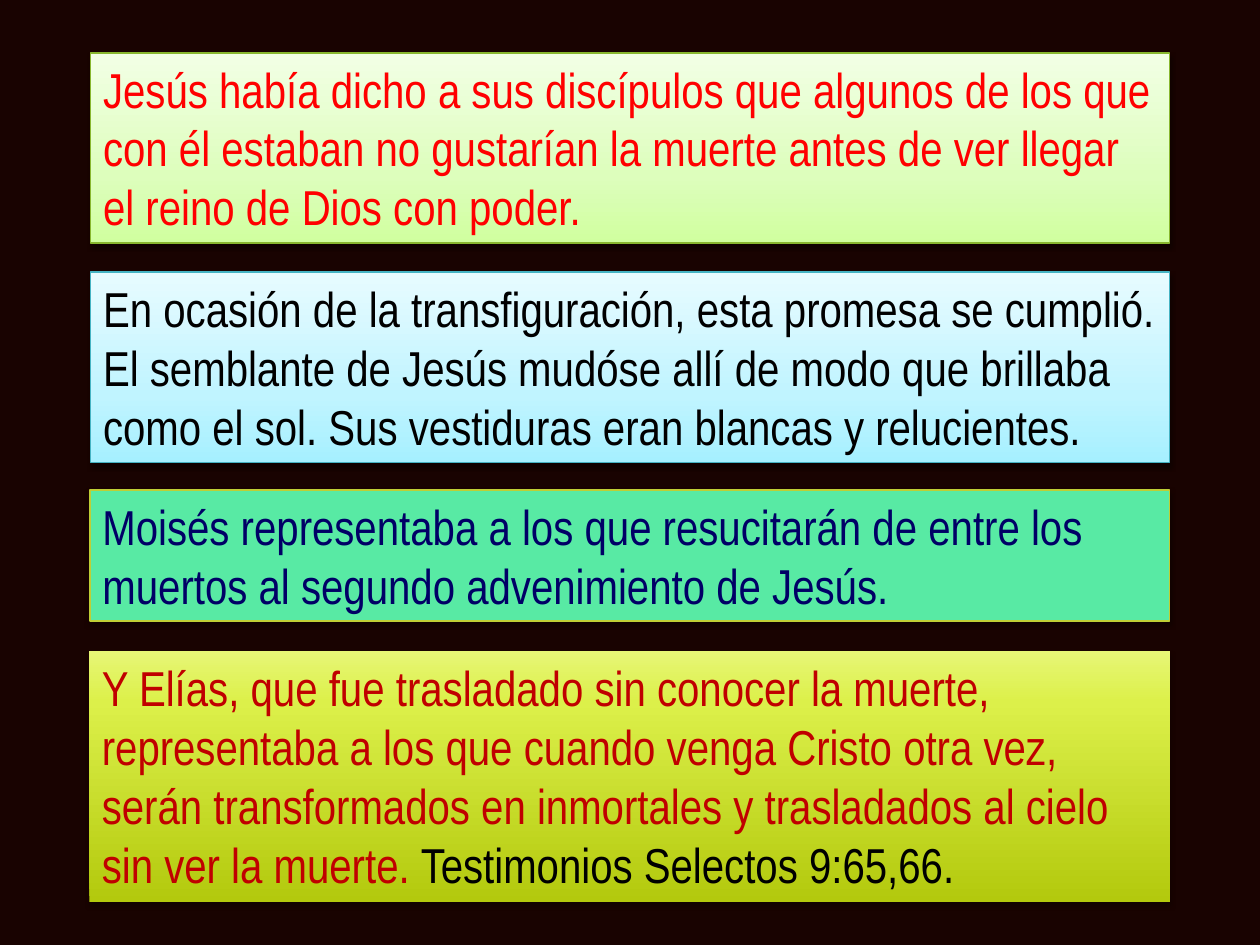
from lxml import etree
from pptx import Presentation
from pptx.dml.color import RGBColor
from pptx.enum.shapes import MSO_SHAPE
from pptx.enum.text import MSO_ANCHOR, MSO_AUTO_SIZE, PP_ALIGN
from pptx.oxml.ns import qn
from pptx.util import Inches, Pt

RECT = MSO_SHAPE.RECTANGLE
BLANK_LAYOUT = 6
FONT, FONT_SIZE, OUTLINE = "Arial Narrow", 28, 1.5
SLIDE_W, SLIDE_H = 10, 7.5
COLORS = {
    "background": "190301", "red": "FF0000", "black": "000000",
    "navy": "000066", "crimson": "C00000", "mint": "58EAA4",
    "green_line": "88B72F", "cyan_line": "45B3C3", "lime_line": "BFCE35",
}
# Gradient stops run from the bottom of a panel to its top.
GREEN = [(0, "D0FF9F"), (35, "DDFEBC"), (100, "F2FFE5")]
CYAN = [(0, "A6F0FF"), (35, "C0F4FF"), (100, "E7FBFF")]
LIME = [(0, "B3C90D"), (80, "DCF04A"), (100, "E7F676")]

# Panels are centred across the slide; shadow is (opacity %, distance pt).
PANELS = [
    {"top": 0.42, "width": 8.56, "height": 1.51, "fill": GREEN,
     "line": "green_line", "shadow": (38, 1.6),
     "runs": [("Jesús había dicho a sus discípulos que algunos de los que con él "
               "estaban no gustarían la muerte antes de ver llegar el reino de "
               "Dios con poder.", "red")]},
    {"top": 2.16, "width": 8.56, "height": 1.51, "fill": CYAN,
     "line": "cyan_line", "shadow": (38, 1.6),
     "runs": [("En ocasión de la transfiguración, esta promesa se cumplió. El "
               "semblante de Jesús mudóse allí de modo que brillaba como el sol. "
               "Sus vestiduras eran blancas y relucientes.", "black")]},
    {"top": 3.89, "width": 8.57, "height": 1.04, "fill": "mint",
     "line": "lime_line", "shadow": (38, 1.6),
     "runs": [("Moisés representaba a los que resucitarán de entre los muertos "
               "al segundo advenimiento de Jesús.", "navy")]},
    {"top": 5.17, "width": 8.58, "height": 1.99, "fill": LIME,
     "line": None, "shadow": (35, 1.8),
     "runs": [("Y Elías, que fue trasladado sin conocer la muerte, representaba "
               "a los que cuando venga Cristo otra vez, serán transformados en "
               "inmortales y trasladados al cielo sin ver la muerte. ", "crimson"),
              ("Testimonios Selectos 9:65,66.", "black")]},
]


def rgb(name):
    return RGBColor.from_string(COLORS[name])


def add_element(parent, tag, **attrs):
    return etree.SubElement(parent, qn(tag), {k: str(v) for k, v in attrs.items()})


def set_fill(shape, fill):
    """Fill with a named colour or with a list of gradient stops."""
    if isinstance(fill, str):
        shape.fill.solid()
        shape.fill.fore_color.rgb = rgb(fill)
        return
    shape.fill.gradient()
    shape.fill.gradient_angle = 90
    stops = next(shape._element.spPr.iter(qn("a:gsLst")))
    for stop in list(stops):
        stops.remove(stop)
    for percent, color in fill:
        stop = add_element(stops, "a:gs", pos=percent * 1000)
        add_element(stop, "a:srgbClr", val=color)


def set_line(shape, color):
    if color is None:
        shape.line.fill.background()
    else:
        shape.line.color.rgb = rgb(color)
        shape.line.width = Pt(0.75)


def set_shadow(shape, opacity, distance):
    shape.shadow.inherit = False
    effects = shape._element.spPr.find(qn("a:effectLst"))
    shadow = add_element(effects, "a:outerShdw", blurRad=Pt(3.1), dist=Pt(distance),
                         dir=90 * 60000, rotWithShape=0)
    color = add_element(shadow, "a:srgbClr", val=COLORS["black"])
    add_element(color, "a:alpha", val=opacity * 1000)


def add_run(p, text, color):
    r = p.add_run()
    r.text = text
    for name, value in {"name": FONT, "size": Pt(FONT_SIZE)}.items():
        setattr(r.font, name, value)
    r.font.color.rgb = rgb(color)
    outline = etree.Element(qn("a:ln"), w=str(Pt(OUTLINE)))
    add_element(add_element(outline, "a:solidFill"), "a:srgbClr", val=COLORS[color])
    r._r.get_or_add_rPr().insert(0, outline)


def add_panel(s, panel):
    left = (SLIDE_W - panel["width"]) / 2
    sp = s.shapes.add_shape(RECT, Inches(left), Inches(panel["top"]),
                            Inches(panel["width"]), Inches(panel["height"]))
    set_fill(sp, panel["fill"])
    set_line(sp, panel["line"])
    set_shadow(sp, *panel["shadow"])
    tf = sp.text_frame
    frame_format = {"word_wrap": True, "auto_size": MSO_AUTO_SIZE.SHAPE_TO_FIT_TEXT,
                    "vertical_anchor": MSO_ANCHOR.TOP}
    for name, value in frame_format.items():
        setattr(tf, name, value)
    p = tf.paragraphs[0]
    p.alignment = PP_ALIGN.LEFT
    for text, color in panel["runs"]:
        add_run(p, text, color)


def main():
    prs = Presentation()
    prs.slide_width, prs.slide_height = Inches(SLIDE_W), Inches(SLIDE_H)
    s = prs.slides.add_slide(prs.slide_layouts[BLANK_LAYOUT])
    s.background.fill.solid()
    s.background.fill.fore_color.rgb = rgb("background")
    for panel in PANELS:
        add_panel(s, panel)
    prs.save("out.pptx")


if __name__ == "__main__":
    main()
